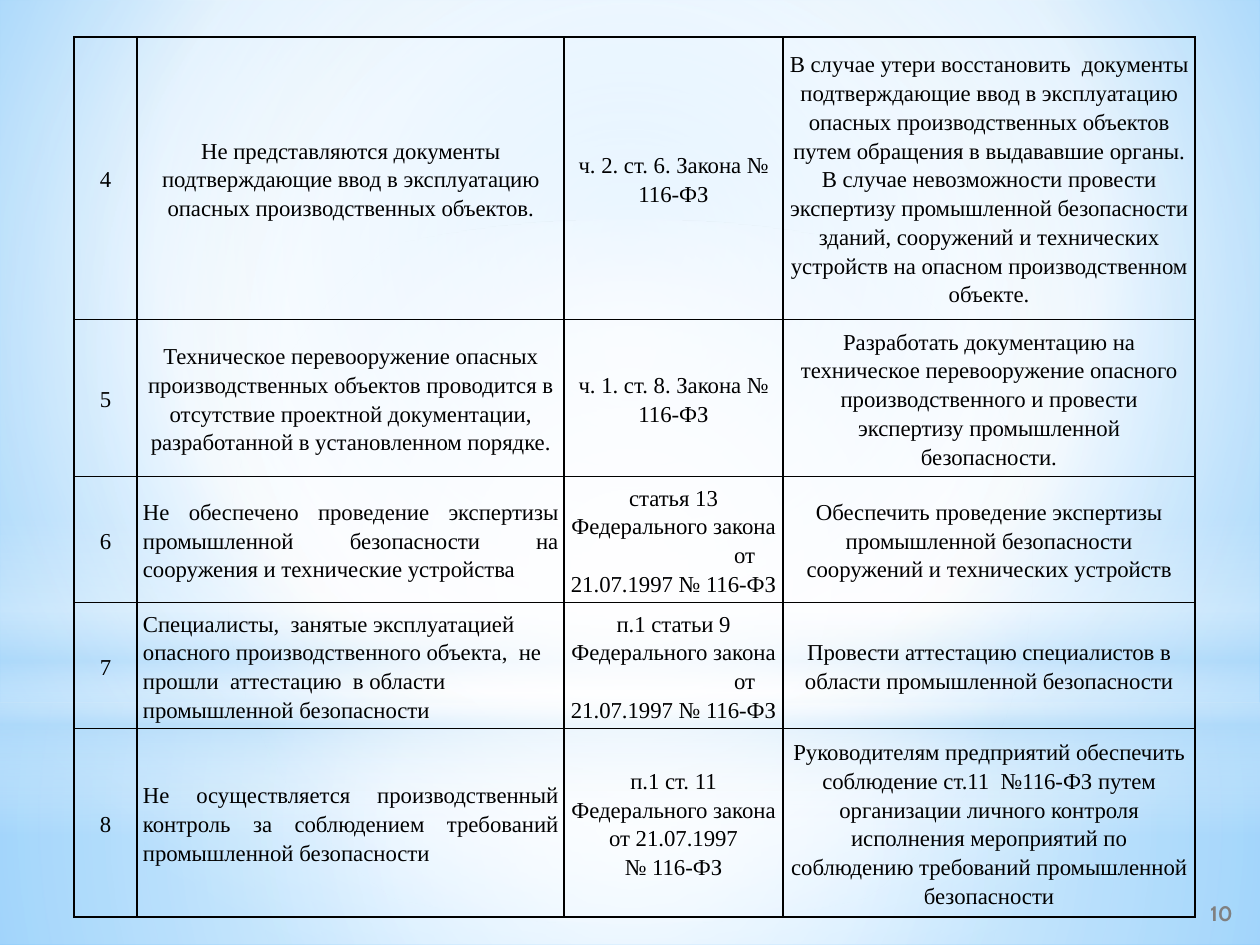
from dataclasses import dataclass

from pptx import Presentation
from pptx import util as u
from pptx.dml.color import RGBColor
from pptx.enum import shapes, text
from pptx.oxml import parse_xml
from pptx.oxml.ns import nsdecls

PX = 914400 / 126
AL = text.PP_ALIGN
MID = text.MSO_ANCHOR.MIDDLE
FROM = "от"


@dataclass(frozen=True)
class Theme:
    body: str = "Times New Roman"
    num: str = "Cabin"
    ink: str = "000000"
    gray: str = "808080"
    white: str = "FFFFFF"
    pale: str = "B4DCFA"
    sky: str = "9ED5FF"
    deep: str = "5BB9FF"
    size: float = 13
    small: float = 12
    lead: float = 1.15
    rule: int = 12700


def px(n):
    return u.Emu(round(n * PX))


def grad(stops, to=None):
    stop = "".join(
        f'<a:gs pos="{pos * 1000}"><a:srgbClr val="{hue}">'
        f'<a:alpha val="{alpha * 1000}"/></a:srgbClr></a:gs>'
        for pos, hue, alpha in stops)
    if to:
        rect = " ".join(f'{side}="{n * 1000}"' for side, n in zip("ltrb", to))
        way = f'<a:path path="circle"><a:fillToRect {rect}/></a:path>'
    else:
        way = '<a:lin ang="5400000" scaled="0"/>'
    return (f'<a:gradFill {nsdecls("a")} rotWithShape="1">'
            f'<a:gsLst>{stop}</a:gsLst>{way}</a:gradFill>')


class Deck:
    """Holds the theme and the current slide, and draws each kind of element."""

    def __init__(self, theme):
        self.t = theme
        self.prs = Presentation()
        self.prs.slide_width, self.prs.slide_height = px(1260), px(945)
        self.slide = self.prs.slides.add_slide(self.prs.slide_layouts[6])

    def back(self, stops, to):
        self.slide.element.cSld.insert(0, parse_xml(
            f'<p:bg {nsdecls("p")}><p:bgPr>{grad(stops, to)}'
            f'<a:effectLst {nsdecls("a")}/></p:bgPr></p:bg>'))

    def glow(self, kind, box, stops, to=None):
        shape = self.slide.shapes.add_shape(kind, *map(px, box))
        shape.element.spPr.insert(2, parse_xml(grad(stops, to)))
        shape.line.fill.background()
        shape.shadow.inherit = False

    def style(self, para, face, size, hue, align, bold=False):
        para.alignment = align
        font = para.font
        font.name, font.size, font.bold = face, u.Pt(size), bold
        font.color.rgb = RGBColor.from_string(hue)

    def label(self, words, box):
        frame = self.slide.shapes.add_textbox(*map(px, box)).text_frame
        frame.word_wrap = True
        frame.vertical_anchor = MID
        frame.text = words
        self.style(frame.paragraphs[0], self.t.num, self.t.small,
                   self.t.gray, AL.RIGHT, True)

    def cell(self, cell, words, align):
        edge = cell._tc.get_or_add_tcPr()
        for side in "LRTB":
            edge.append(parse_xml(
                f'<a:ln{side} {nsdecls("a")} w="{self.t.rule}"><a:solidFill>'
                f'<a:srgbClr val="{self.t.ink}"/></a:solidFill></a:ln{side}>'))
        cell.fill.background()
        cell.vertical_anchor = MID
        cell.margin_left = cell.margin_right = px(6)
        cell.margin_top = cell.margin_bottom = 0
        cell.text_frame.text = words
        for para in cell.text_frame.paragraphs:
            para.line_spacing = self.t.lead
            if para.text == FROM:
                para._p.get_or_add_pPr().set("marL", str(px(142)))
            self.style(para, self.t.body, self.t.size, self.t.ink, align)

    def table(self, left, top, cols, highs, rows, aligns):
        grid = self.slide.shapes.add_table(
            len(rows), len(cols), px(left), px(top),
            px(sum(cols)), px(sum(highs))).table
        grid.first_row = grid.horz_banding = False
        for col, wide in zip(grid.columns, cols):
            col.width = px(wide)
        for row, high, words, align in zip(grid.rows, highs, rows, aligns):
            row.height = px(high)
            for i, (cell, word) in enumerate(zip(row.cells, words)):
                self.cell(cell, word, align if i == 1 else AL.CENTER)


ROWS = [
    ("4",
     "Не представляются документы подтверждающие ввод в эксплуатацию "
     "опасных производственных объектов.",
     "ч. 2. ст. 6. Закона № 116-ФЗ",
     "В случае утери восстановить  документы подтверждающие ввод в "
     "эксплуатацию опасных производственных объектов путем обращения в "
     "выдававшие органы.\n"
     "В случае невозможности провести экспертизу промышленной безопасности "
     "зданий, сооружений и технических устройств на опасном "
     "производственном объекте."),
    ("5",
     "Техническое перевооружение опасных производственных объектов "
     "проводится в отсутствие проектной документации, разработанной в "
     "установленном порядке.",
     "ч. 1. ст. 8. Закона № 116-ФЗ",
     "Разработать документацию на техническое перевооружение опасного "
     "производственного и провести экспертизу промышленной безопасности."),
    ("6",
     "Не обеспечено проведение экспертизы промышленной безопасности на "
     "сооружения и технические устройства",
     f"статья 13 Федерального закона\n{FROM}\n21.07.1997 № 116-ФЗ",
     "Обеспечить проведение экспертизы промышленной безопасности "
     "сооружений и технических устройств"),
    ("7",
     "Специалисты,  занятые эксплуатацией опасного производственного "
     "объекта,  не прошли  аттестацию  в области промышленной безопасности",
     f"п.1 статьи 9 Федерального закона\n{FROM}\n21.07.1997 № 116-ФЗ",
     "Провести аттестацию специалистов в области промышленной безопасности"),
    ("8",
     "Не осуществляется производственный контроль за соблюдением требований "
     "промышленной безопасности",
     "п.1 ст. 11 Федерального закона от 21.07.1997\n№ 116-ФЗ",
     "Руководителям предприятий обеспечить соблюдение ст.11  №116-ФЗ путем "
     "организации личного контроля исполнения мероприятий по соблюдению "
     "требований промышленной безопасности"),
]


def main():
    t = Theme()
    deck = Deck(t)
    rect, oval = shapes.MSO_SHAPE.RECTANGLE, shapes.MSO_SHAPE.OVAL
    mid = (50, 50, 50, 50)
    deck.back([(0, t.sky, 100), (60, t.white, 100), (100, t.deep, 100)],
              (20, 10, 20, 60))
    deck.glow(rect, (0, 703, 1260, 242),
              [(0, t.white, 91), (37, t.white, 76), (100, t.pale, 79)], mid)
    deck.glow(rect, (0, 0, 1260, 703),
              [(0, t.white, 89), (48, t.white, 62), (100, t.pale, 79)], mid)
    deck.glow(rect, (0, 519, 1260, 315),
              [(0, t.white, 0), (29, t.white, 30), (45, t.pale, 40),
               (55, t.white, 26), (65, t.pale, 60), (100, t.white, 0)])
    deck.glow(oval, (0, 220, 1260, 703),
              [(0, t.white, 100), (56, t.white, 0)], mid)
    deck.label("10", (993, 888, 252, 50))
    deck.table(74, 37, (63, 427, 219, 412), (282, 157, 126, 126, 188), ROWS,
               (AL.CENTER, AL.CENTER, AL.JUSTIFY, AL.LEFT, AL.JUSTIFY))
    deck.prs.save("out.pptx")


if __name__ == "__main__":
    main()
